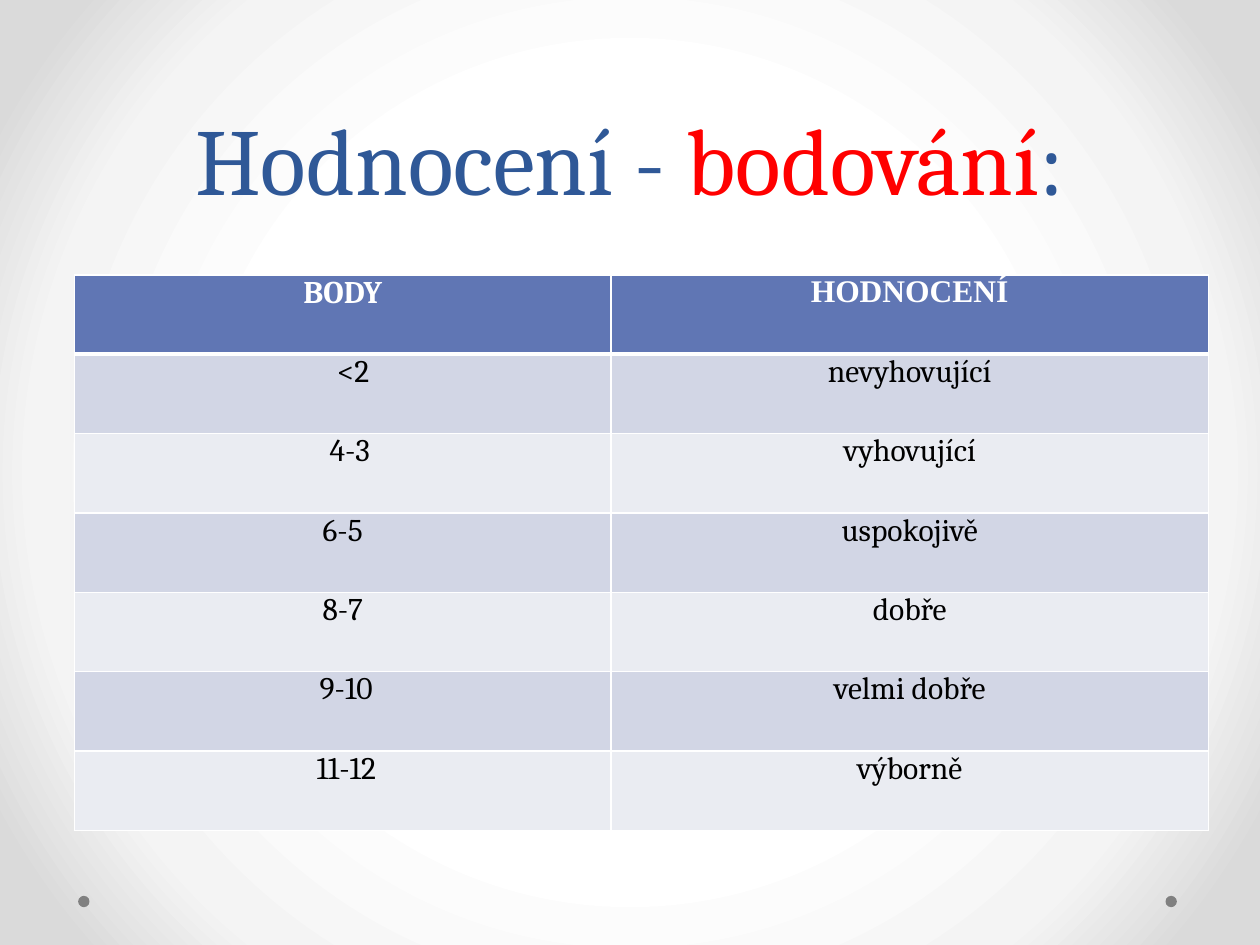
"""Build the grading slide with its table of points and marks."""
from dataclasses import dataclass

import lxml.etree
import pptx
import pptx.dml.color
import pptx.enum.shapes
import pptx.enum.text
import pptx.oxml
import pptx.oxml.ns
import pptx.util

Pt = pptx.util.Pt
PP_ALIGN = pptx.enum.text.PP_ALIGN
MSO_ANCHOR = pptx.enum.text.MSO_ANCHOR
NSDECLS = pptx.oxml.ns.nsdecls("a", "p")
BACKGROUND_STOPS = ((50, "FFFFFF"), (76, "F4F4F4"), (92, "DADADA"))
COL_WIDTHS = (306.72, 341.28)
ROW_HEIGHT = 45.36
HEADER_FILL = "6076B4"
BAND_FILLS = ("D2D6E5", "EAECF2")


@dataclass
class Span:
    text: str
    color: str
    size: float = 18
    font: str = "Cambria"
    bold: bool = False


@dataclass
class Grade:
    points: str
    mark: str
    indent: float = 0


TITLE = (
    Span("Hodnocení - ", "2F5897", 54),
    Span("bodování", "FF0000", 54),
    Span(":", "2F5897", 54),
)
HEADER = (
    Span("BODY", "FFFFFF", bold=True),
    Span("HODNOCENÍ", "FFFFFF", font="Times New Roman", bold=True),
)
GRADES = (
    Grade("<2", "nevyhovující", 12),
    Grade("4-3", "vyhovující", 8),
    Grade("6-5", "uspokojivě"),
    Grade("8-7", "dobře"),
    Grade("9-10", "velmi dobře", 4),
    Grade("11-12", "výborně", 4),
)


def rgb(value: str) -> pptx.dml.color.RGBColor:
    return pptx.dml.color.RGBColor.from_string(value)


def set_attrs(obj, values: dict) -> None:
    for name, value in values.items():
        setattr(obj, name, value)


def write_spans(p, spans: tuple) -> None:
    p.alignment = PP_ALIGN.CENTER
    for span in spans:
        r = p.add_run()
        r.text = span.text
        set_attrs(r.font, {"name": span.font, "size": Pt(span.size), "bold": span.bold})
        r.font.color.rgb = rgb(span.color)


def set_background(s) -> None:
    stops = "".join(
        f'<a:gs pos="{pos * 1000}"><a:srgbClr val="{color}"/></a:gs>'
        for pos, color in BACKGROUND_STOPS
    )
    bg = pptx.oxml.parse_xml(
        f'<p:bg {NSDECLS}><p:bgPr><a:gradFill rotWithShape="1"><a:gsLst>{stops}</a:gsLst>'
        '<a:path path="circle"><a:fillToRect l="50000" t="50000" r="50000" b="50000"/>'
        "</a:path></a:gradFill><a:effectLst/></p:bgPr></p:bg>"
    )
    s.element.cSld.insert(0, bg)


def add_dot(s, left: float) -> None:
    sp = s.shapes.add_shape(
        pptx.enum.shapes.MSO_SHAPE.OVAL, Pt(left), Pt(511.9), Pt(6.5), Pt(6.5)
    )
    sp.shadow.inherit = False
    sp.fill.solid()
    sp.fill.fore_color.rgb = rgb("808080")
    sp.line.fill.background()


def add_title(s) -> None:
    tf = s.shapes.add_textbox(Pt(36), Pt(0), Pt(648), Pt(126)).text_frame
    set_attrs(tf, {"word_wrap": True, "vertical_anchor": MSO_ANCHOR.BOTTOM})
    p = tf.paragraphs[0]
    p.line_spacing = Pt(58)
    write_spans(p, TITLE)


def set_borders(cell, top: float, bottom: float) -> None:
    tc_pr = cell._tc.get_or_add_tcPr()
    widths = {"lnL": 1, "lnR": 1, "lnT": top, "lnB": bottom}
    for index, (tag, width) in enumerate(widths.items()):
        tc_pr.insert(index, pptx.oxml.parse_xml(
            f'<a:{tag} {NSDECLS} w="{Pt(width)}"><a:solidFill>'
            f'<a:srgbClr val="FFFFFF"/></a:solidFill></a:{tag}>'
        ))


def fill_cell(cell, span: Span, fill: str, indent: float = 0,
              top: float = 1, bottom: float = 1) -> None:
    set_attrs(cell, {
        "margin_left": Pt(5 + indent), "margin_right": Pt(5),
        "margin_top": 0, "margin_bottom": 0, "vertical_anchor": MSO_ANCHOR.TOP,
    })
    cell.fill.solid()
    cell.fill.fore_color.rgb = rgb(fill)
    set_borders(cell, top, bottom)
    write_spans(cell.text_frame.paragraphs[0], (span,))


def add_grade_table(s) -> None:
    rows = len(GRADES) + 1
    table = s.shapes.add_table(
        rows, len(COL_WIDTHS), Pt(42.5), Pt(157),
        Pt(sum(COL_WIDTHS)), Pt(rows * ROW_HEIGHT)
    ).table
    table.horz_banding = False
    for column, width in zip(table.columns, COL_WIDTHS):
        column.width = Pt(width)
    for row in table.rows:
        row.height = Pt(ROW_HEIGHT)
    for col, span in enumerate(HEADER):
        fill_cell(table.cell(0, col), span, HEADER_FILL, bottom=3)
    for row, grade in enumerate(GRADES, 1):
        fill = BAND_FILLS[(row - 1) % 2]
        top = 3 if row == 1 else 1
        fill_cell(table.cell(row, 0), Span(grade.points, "000000"), fill, grade.indent, top)
        fill_cell(table.cell(row, 1), Span(grade.mark, "000000"), fill, top=top)


def main() -> None:
    prs = pptx.Presentation()
    set_attrs(prs, {"slide_width": Pt(720), "slide_height": Pt(540)})
    s = prs.slides.add_slide(prs.slide_layouts[6])
    set_background(s)
    for left in (666, 44.64):
        add_dot(s, left)
    add_title(s)
    add_grade_table(s)
    prs.save("out.pptx")


if __name__ == "__main__":
    main()
